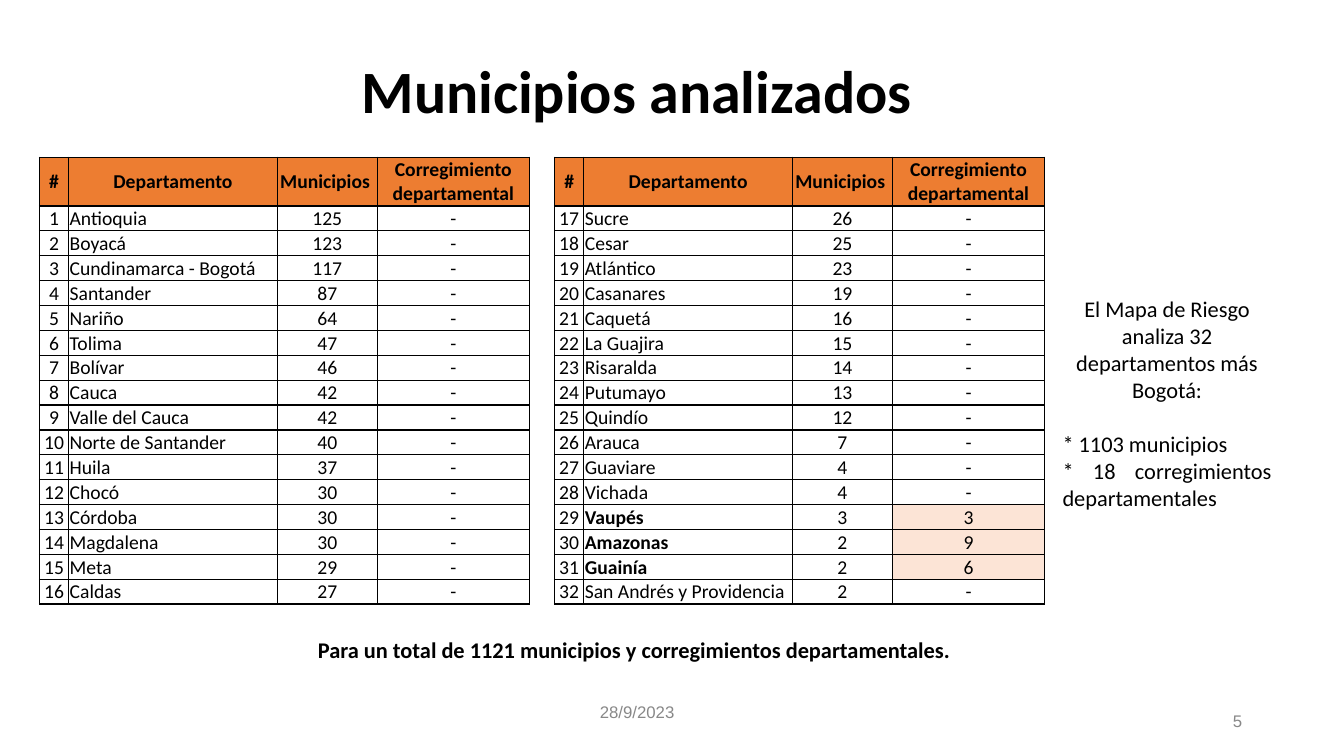
from lxml.etree import SubElement
from pptx import Presentation
from pptx.dml.color import RGBColor
from pptx.enum.text import MSO_ANCHOR, MSO_AUTO_SIZE, PP_ALIGN
from pptx.oxml.ns import qn
from pptx.util import Inches, Pt

COLORS = {
    "text": "000000",
    "footer": "888888",
    "header": "ED7D31",
    "highlight": "FCE4D6",
    "border": "000000",
}
SLIDE_WIDTH, SLIDE_HEIGHT = Inches(13.33), Inches(7.5)

# Lengths are percentages of the slide's width or height
TABLE_LEFTS = (2.93, 41.26)
TABLE_TOP = 20.8
COLUMN_WIDTHS = (2.18, 15.53, 7.43, 11.33)
HEADER_HEIGHT, ROW_HEIGHT = 6.4, 3.25

HEADERS = ("#", "Departamento", "Municipios ", "Corregimiento departamental")
DEPARTMENTS = [
    ("Antioquia", 125), ("Boyacá", 123), ("Cundinamarca - Bogotá", 117),
    ("Santander", 87), ("Nariño", 64), ("Tolima", 47), ("Bolívar", 46),
    ("Cauca", 42), ("Valle del Cauca", 42), ("Norte de Santander", 40),
    ("Huila", 37), ("Chocó", 30), ("Córdoba", 30), ("Magdalena", 30),
    ("Meta", 29), ("Caldas", 27), ("Sucre", 26), ("Cesar", 25),
    ("Atlántico", 23), ("Casanares", 19), ("Caquetá", 16),
    ("La Guajira", 15), ("Risaralda", 14), ("Putumayo", 13),
    ("Quindío", 12), ("Arauca", 7), ("Guaviare", 4), ("Vichada", 4),
    ("Vaupés", 3), ("Amazonas", 2), ("Guainía", 2),
    ("San Andrés y Providencia", 2),
]
CORREGIMIENTOS = {"Vaupés": 3, "Amazonas": 9, "Guainía": 6}
ROWS_PER_TABLE = len(DEPARTMENTS) // len(TABLE_LEFTS)


def across(percent):
    return int(SLIDE_WIDTH * percent / 100)


def down(percent):
    return int(SLIDE_HEIGHT * percent / 100)


def format_paragraph(paragraph, size, alignment=PP_ALIGN.CENTER, bold=False,
                     font_name="Calibri", color="text"):
    paragraph.alignment = alignment
    font = paragraph.font
    font.name, font.size, font.bold = font_name, Pt(size), bold
    font.color.rgb = RGBColor.from_string(COLORS[color])


def add_title(slide, text):
    title = slide.shapes.title
    title.left, title.top = across(6.6), down(5.6)
    title.width, title.height = across(81.55), down(13.6)
    frame = title.text_frame
    frame.text = text
    frame.auto_size = MSO_AUTO_SIZE.NONE
    frame.vertical_anchor = MSO_ANCHOR.MIDDLE
    paragraph = frame.paragraphs[0]
    paragraph.line_spacing = 0.9
    format_paragraph(paragraph, 42.9, bold=True)


def add_text(slide, left, top, width, height, text, size=16,
             anchor=MSO_ANCHOR.TOP, **formatting):
    box = slide.shapes.add_textbox(across(left), down(top),
                                   across(width), down(height))
    frame = box.text_frame
    frame.word_wrap = True
    frame.vertical_anchor = anchor
    frame.text = text
    for paragraph in frame.paragraphs:
        format_paragraph(paragraph, size, **formatting)
    return frame


def add_footer(slide, left, top, text, alignment):
    add_text(slide, left, top, 22.5, 5.33, text, size=12,
             anchor=MSO_ANCHOR.MIDDLE, alignment=alignment,
             font_name="Arial", color="footer")


def add_borders(cell):
    properties = cell._tc.get_or_add_tcPr()
    for side in ("a:lnL", "a:lnR", "a:lnT", "a:lnB"):
        line = SubElement(properties, qn(side), w=str(Pt(1)))
        fill = SubElement(line, qn("a:solidFill"))
        SubElement(fill, qn("a:srgbClr"), val=COLORS["border"])


def fill_cell(cell, text, anchor, fill=None, **formatting):
    cell.text = str(text)
    cell.vertical_anchor = anchor
    cell.margin_left = cell.margin_right = cell.margin_top = Inches(0.01)
    cell.margin_bottom = 0
    format_paragraph(cell.text_frame.paragraphs[0], 14, **formatting)
    add_borders(cell)
    if fill:
        cell.fill.solid()
        cell.fill.fore_color.rgb = RGBColor.from_string(COLORS[fill])
    else:
        cell.fill.background()


def add_department_table(slide, left, first_number, departments):
    height = HEADER_HEIGHT + ROW_HEIGHT * len(departments)
    table = slide.shapes.add_table(
        len(departments) + 1, len(HEADERS), across(left), down(TABLE_TOP),
        across(sum(COLUMN_WIDTHS)), down(height)).table
    table.first_row = table.horz_banding = False
    for column, width in zip(table.columns, COLUMN_WIDTHS):
        column.width = across(width)
    for row in table.rows:
        row.height = down(ROW_HEIGHT)
    table.rows[0].height = down(HEADER_HEIGHT)

    # Header row
    for index, header in enumerate(HEADERS):
        fill_cell(table.cell(0, index), header, MSO_ANCHOR.MIDDLE,
                  fill="header", bold=True)

    # One row per department; those with corregimientos stand out
    for row, (name, municipalities) in enumerate(departments, start=1):
        special = name in CORREGIMIENTOS
        values = (first_number + row - 1, name, municipalities,
                  CORREGIMIENTOS.get(name, "-"))
        for index, value in enumerate(values):
            is_name = index == 1
            fill_cell(table.cell(row, index), value, MSO_ANCHOR.BOTTOM,
                      fill="highlight" if special and index == 3 else None,
                      bold=special and is_name,
                      alignment=PP_ALIGN.LEFT if is_name else PP_ALIGN.CENTER)


def add_summary(slide):
    frame = add_text(
        slide, 78.32, 38.4, 17.03, 33.6,
        "El Mapa de Riesgo analiza 32 departamentos más Bogotá:\n"
        "* 1103 municipios \n"
        "* 18 corregimientos departamentales",
        alignment=PP_ALIGN.JUSTIFY)
    introduction, municipalities, _ = frame.paragraphs
    introduction.alignment = PP_ALIGN.CENTER
    municipalities.space_before = Pt(19.5)


def main():
    presentation = Presentation()
    presentation.slide_width = SLIDE_WIDTH
    presentation.slide_height = SLIDE_HEIGHT
    slide = presentation.slides.add_slide(presentation.slide_layouts[5])

    add_title(slide, "Municipios analizados")

    # Two tables side by side
    for index, left in enumerate(TABLE_LEFTS):
        start = index * ROWS_PER_TABLE
        add_department_table(slide, left, start + 1,
                             DEPARTMENTS[start:start + ROWS_PER_TABLE])

    # Side note and total
    add_summary(slide)
    add_text(slide, 16.43, 83.47, 61.89, 5.6,
             "Para un total de 1121 municipios y corregimientos "
             "departamentales. ", bold=True)

    # Date and slide number
    add_footer(slide, 36.16, 91.47, "28/9/2023", PP_ALIGN.CENTER)
    add_footer(slide, 70.67, 92.67, "5", PP_ALIGN.RIGHT)

    presentation.save("out.pptx")


if __name__ == "__main__":
    main()
